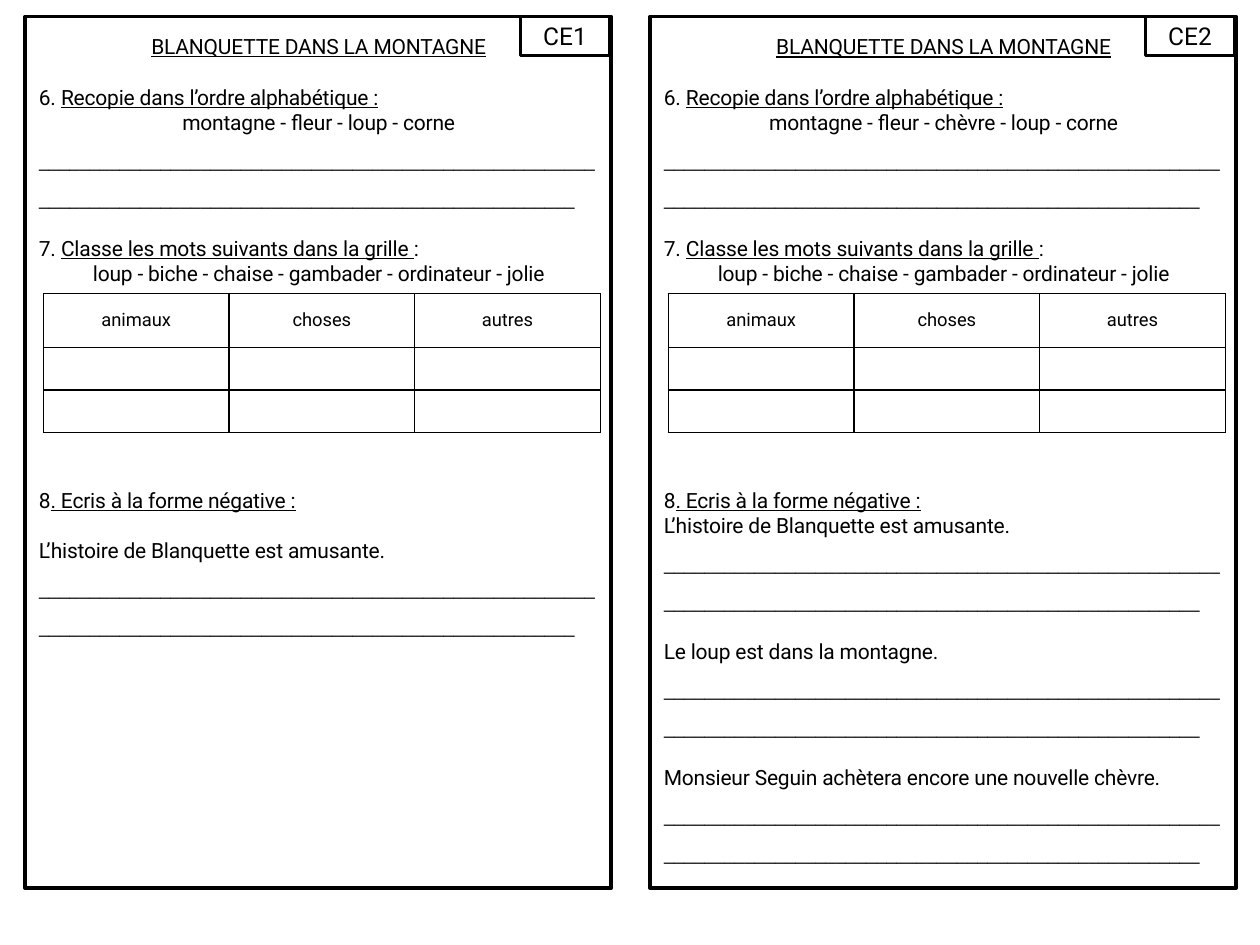
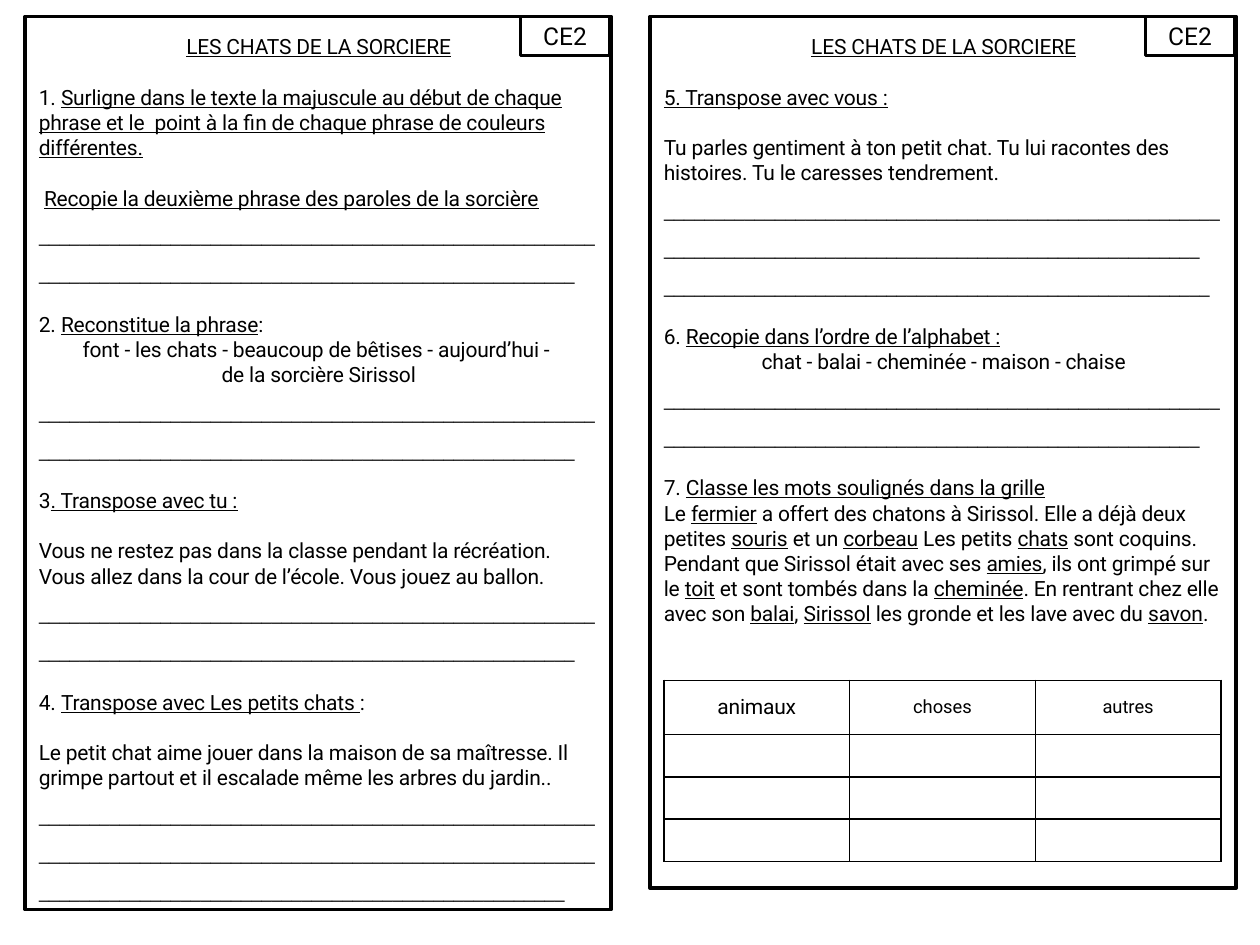
import collections
import pptx
import pptx.util
import pptx.dml.color
import pptx.enum.shapes
import pptx.enum.text
import pptx.oxml
import pptx.oxml.ns

FONT = "Roboto"
INK = "000000"
PAPER = "FFFFFF"
UNIT = 0.1
LEFT, RIGHT, TOP = 2, 51.6, 1.3
WIDE, TALL = 46.5, 69.2
CENTER = pptx.enum.text.PP_ALIGN.CENTER
MIDDLE = pptx.enum.text.MSO_ANCHOR.MIDDLE

Line = collections.namedtuple("Line", "text gap mid rule", defaults=(0, False, False))


def task(text, gap=1):
    return Line(text, gap)


def words(text):
    return Line(text, mid=True)


def rule(halves=2):
    return Line("_" * 54 * halves, rule=True)


def grid(*cells):
    return [pptx.util.Inches(cell * UNIT) for cell in cells]


def color(code):
    return pptx.dml.color.RGBColor.from_string(code)


def style(para, size, face=FONT, track=0):
    font = para.font
    font.name = face
    font.size = pptx.util.Pt(size)
    font.color.rgb = color(INK)
    if track:
        props = para._p.get_or_add_pPr()
        props.find(pptx.oxml.ns.qn("a:defRPr")).set("spc", str(track))


def frame(slide, x, y, w, h):
    shape = slide.shapes.add_shape(
        pptx.enum.shapes.MSO_SHAPE.RECTANGLE, *grid(x, y, w, h))
    shape.shadow.inherit = False
    shape.fill.solid()
    shape.fill.fore_color.rgb = color(PAPER)
    shape.line.color.rgb = color(INK)
    shape.line.width = pptx.util.Pt(2)
    return shape


def badge(slide, x, level):
    shape = frame(slide, x + 39.3, TOP, 7.1, 3.1)
    shape.text_frame.vertical_anchor = MIDDLE
    para = shape.text_frame.paragraphs[0]
    para.text = level
    para.alignment = CENTER
    style(para, 14)


def write(para, line):
    for spot, part in enumerate(line.text.split("*")):
        if part:
            run = para.add_run()
            run.text = part
            if spot % 2:
                run.font.underline = True
    if line.rule:
        style(para, 12, "Calibri", -20)
        para.line_spacing = 1.5
    else:
        style(para, 12, FONT, -10)
    if line.mid:
        para.alignment = CENTER
    if line.gap:
        para.space_before = pptx.util.Pt(14.4 * line.gap)
    para._p.get_or_add_pPr().set("marL", str(pptx.util.Inches(0.01)))


def card(slide, x, level, title, lines, depth, tall=TALL):
    frame(slide, x, TOP, WIDE, tall)
    badge(slide, x, level)
    body = slide.shapes.add_textbox(*grid(x, 2.2, WIDE, depth)).text_frame
    body.word_wrap = True
    body.auto_size = pptx.enum.text.MSO_AUTO_SIZE.SHAPE_TO_FIT_TEXT
    write(body.paragraphs[0], words(f"*{title}*"))
    for line in lines:
        write(body.add_paragraph(), line)


def border(cell):
    props = cell._tc.get_or_add_tcPr()
    for spot, side in enumerate(("lnL", "lnR", "lnT", "lnB")):
        props.insert(spot, pptx.oxml.parse_xml(
            f'<a:{side} {pptx.oxml.ns.nsdecls("a")} w="12700"><a:solidFill>'
            f'<a:srgbClr val="{INK}"/></a:solidFill></a:{side}>'))


def sorter(slide, x, y, blanks, first=10.5):
    heads = ("animaux", "choses", "autres")
    high = 4.3 + 3.36 * blanks
    table = slide.shapes.add_table(
        blanks + 1, len(heads), *grid(x, y, 44.2, high)).table
    table.first_row = table.horz_banding = False
    for row in table.rows:
        row.height = grid(3.36)[0]
    table.rows[0].height = grid(4.3)[0]
    for cell in table.iter_cells():
        cell.fill.background()
        cell.vertical_anchor = MIDDLE
        border(cell)
        style(cell.text_frame.paragraphs[0], 10.5)
    for col, head in enumerate(heads):
        para = table.cell(0, col).text_frame.paragraphs[0]
        para.text = head
        para.alignment = CENTER
    if first != 10.5:
        style(table.cell(0, 0).text_frame.paragraphs[0], first, FONT, -10)


def goat(slide, x, level, series, tail, depth):
    lines = [
        task("6. *Recopie dans l’ordre alphabétique :*"),
        words(series),
        rule(),
        task("7. *Classe les mots suivants dans la grille *:"),
        words("loup - biche - chaise - gambader - ordinateur - jolie"),
        task("8*. Ecris à la forme négative :*", 8),
    ]
    card(slide, x, level, "BLANQUETTE DANS LA MONTAGNE", lines + tail, depth)
    sorter(slide, x + 1.45, 23.3, 2)


def cats(slide):
    title = "LES CHATS DE LA SORCIERE"
    card(slide, RIGHT, "CE2", title, [
        task("*5. Transpose avec vous :*"),
        task("Tu parles gentiment à ton petit chat. Tu lui racontes des "
             "histoires. Tu le caresses tendrement."),
        rule(),
        rule(1),
        task("6. *Recopie dans l’ordre de l’alphabet :*"),
        words("chat - balai - cheminée - maison - chaise"),
        rule(),
        task("7. *Classe les mots soulignés dans la grille*"),
        task("Le *fermier* a offert des chatons à Sirissol. Elle a déjà deux "
             "petites *souris* et un *corbeau* Les petits *chats* sont coquins. "
             "Pendant que Sirissol était avec ses *amies*, ils ont grimpé sur "
             "le *toit* et sont tombés dans la *cheminée*. En rentrant chez "
             "elle avec son *balai*, *Sirissol* les gronde et les lave avec du "
             "*savon*.", 0),
    ], 70.7)
    card(slide, LEFT, "CE2", title, [
        task("1. *Surligne dans le texte la majuscule au début de chaque "
             "phrase et le  point à la fin de chaque phrase de couleurs "
             "différentes.*"),
        task(" *Recopie la deuxième phrase des paroles de la sorcière*"),
        rule(),
        task("2. *Reconstitue la phrase*:"),
        words("font - les chats - beaucoup de bêtises - aujourd’hui - "),
        words("de la sorcière Sirissol"),
        rule(),
        task("3*. Transpose avec tu :*"),
        task("Vous ne restez pas dans la classe pendant la récréation. "
             "Vous allez dans la cour de l’école. Vous jouez au ballon."),
        rule(),
        task("4. *Transpose avec Les petits chats *:"),
        task("Le petit chat aime jouer dans la maison de sa maîtresse. Il "
             "grimpe partout et il escalade même les arbres du jardin.."),
        rule(3),
    ], 76.7, 70.9)
    sorter(slide, RIGHT + 1.1, 54, 3, 12)


def main():
    deck = pptx.Presentation()
    deck.slide_width, deck.slide_height = grid(100, 75)
    blank = deck.slide_layouts[6]
    story = "L’histoire de Blanquette est amusante."

    slide = deck.slides.add_slide(blank)
    goat(slide, LEFT, "CE1", "montagne - fleur - loup - corne",
         [task(story), rule()], 59.6)
    goat(slide, RIGHT, "CE2", "montagne - fleur - chèvre - loup - corne", [
        task(story, 0), rule(),
        task("Le loup est dans la montagne."), rule(),
        task("Monsieur Seguin achètera encore une nouvelle chèvre."), rule(),
    ], 80.8)

    cats(deck.slides.add_slide(blank))
    deck.save("out.pptx")


if __name__ == "__main__":
    main()
